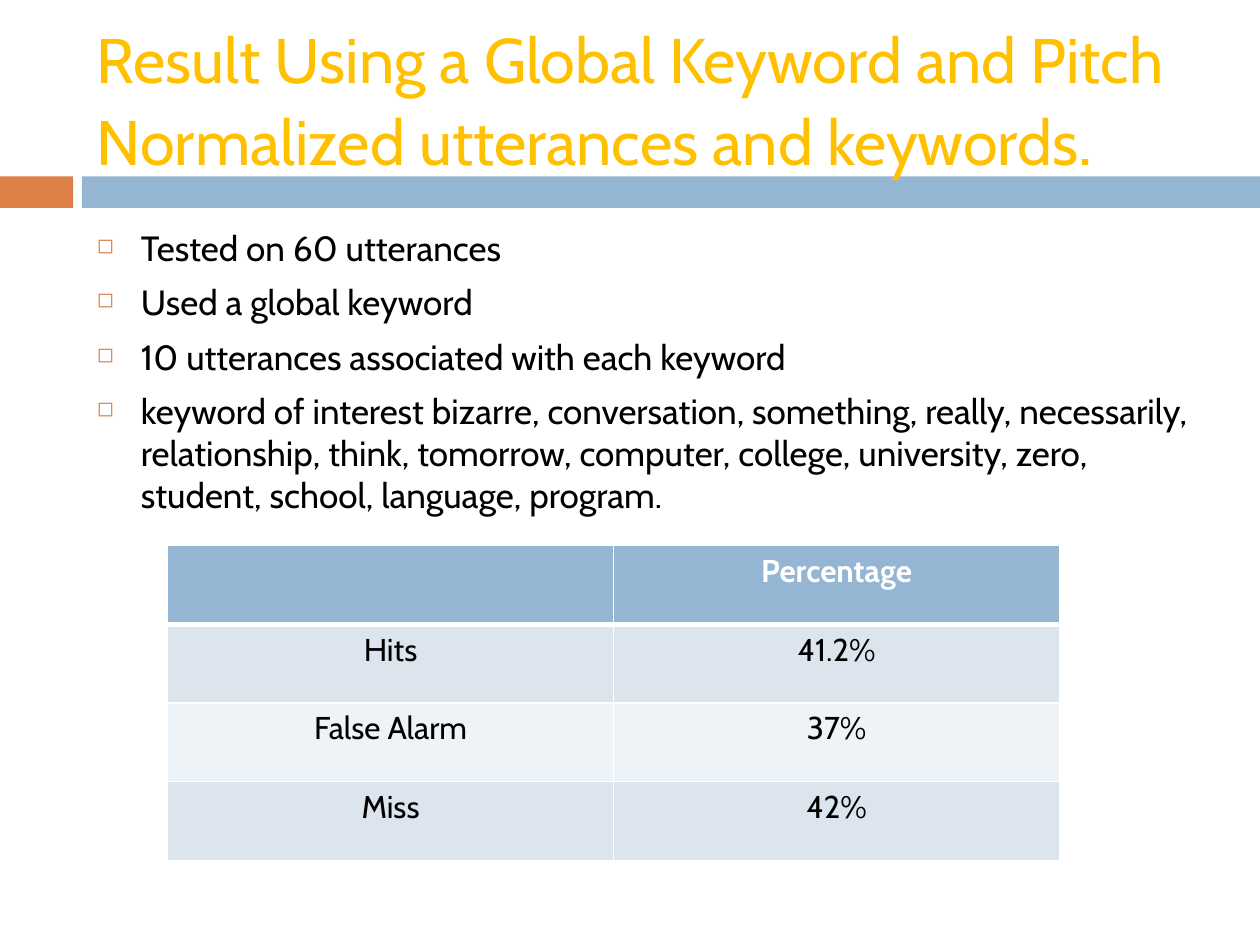
"""Build the slide on keyword results with pitch normalized utterances."""
from lxml.etree import SubElement
from pptx import Presentation
from pptx.dml.color import RGBColor
from pptx.enum.shapes import MSO_SHAPE
from pptx.enum.text import MSO_ANCHOR, PP_ALIGN
from pptx.oxml.ns import qn
from pptx.util import Inches, Pt

COLORS = {
    "orange": "DD8047", "blue": "94B6D2", "gold": "FFC000", "black": "000000",
    "white": "FFFFFF", "band": "DCE5EE", "pale": "EEF3F7",
}
FONT = "Cabin"
MARGIN, TEXT_WIDTH = 0.67, 8.92
BAND_TOP, BAND_HEIGHT = 1.4, 0.25
BULLETS = [
    "Tested on 60 utterances",
    "Used a global keyword",
    "10 utterances associated with each keyword",
    "keyword of interest bizarre, conversation, something, really, necessarily, "
    "relationship, think, tomorrow, computer, college, university, zero, "
    "student, school, language, program.",
]
RESULTS = [("", "Percentage"), ("Hits", "41.2%"), ("False Alarm", "37%"), ("Miss", "42%")]


def style(font, size, color, bold=False):
    font.name, font.size, font.bold = FONT, Pt(size), bold
    font.color.rgb = RGBColor.from_string(COLORS[color])


def add_border(cell, side, width):
    line = SubElement(cell._tc.get_or_add_tcPr(), qn(f"a:{side}"), w=str(Pt(width)))
    SubElement(SubElement(line, qn("a:solidFill")), qn("a:srgbClr"), val=COLORS["white"])


prs = Presentation()
prs.slide_width, prs.slide_height = Inches(10), Inches(7.5)
slide = prs.slides.add_slide(prs.slide_layouts[6])

for left, width, color in [(0, 0.58, "orange"), (0.65, 9.35, "blue")]:
    band = slide.shapes.add_shape(
        MSO_SHAPE.RECTANGLE, Inches(left), Inches(BAND_TOP), Inches(width), Inches(BAND_HEIGHT))
    band.shadow.inherit = False
    band.fill.solid()
    band.fill.fore_color.rgb = RGBColor.from_string(COLORS[color])
    band.line.fill.background()

title = slide.shapes.add_textbox(
    Inches(MARGIN), Inches(0.25), Inches(TEXT_WIDTH), Inches(1.08)).text_frame
title.word_wrap = True
title.vertical_anchor = MSO_ANCHOR.MIDDLE
for text, size in [
    ("Result Using a Global Keyword and Pitch Normalized utterances and keywords", 36),
    (".", 39.6),
]:
    run = title.paragraphs[0].add_run()
    run.text = text
    style(run.font, size, "gold")

body = slide.shapes.add_textbox(
    Inches(MARGIN), Inches(BAND_TOP + BAND_HEIGHT + 0.1), Inches(TEXT_WIDTH), Inches(4.92)).text_frame
body.word_wrap = True
for index, text in enumerate(BULLETS):
    point = body.add_paragraph() if index else body.paragraphs[0]
    point.text = text
    if index:
        point.space_before = Pt(7)
    props = point._p.get_or_add_pPr()
    props.set("marL", str(Inches(0.35)))
    props.set("indent", str(-Inches(0.35)))
    SubElement(SubElement(props, qn("a:buClr")), qn("a:srgbClr"), val=COLORS["orange"])
    SubElement(props, qn("a:buSzPct"), val="60000")
    SubElement(props, qn("a:buChar"), char="◻")
    style(point.font, 20, "black")

results = slide.shapes.add_table(
    len(RESULTS), 2, Inches(1.33), Inches(4.33), Inches(7.08), Inches(2.5)).table
for row, values in enumerate(RESULTS):
    fill = "blue" if row == 0 else "band" if row % 2 else "pale"
    for column, value in enumerate(values):
        cell = results.cell(row, column)
        for side in ("lnL", "lnR", "lnT", "lnB"):
            heavy = (row, side) in [(0, "lnB"), (1, "lnT")]
            add_border(cell, side, 3 if heavy else 1)
        cell.fill.solid()
        cell.fill.fore_color.rgb = RGBColor.from_string(COLORS[fill])
        cell.text = value
        label = cell.text_frame.paragraphs[0]
        label.alignment = PP_ALIGN.CENTER
        style(label.font, 18, "black" if row else "white", row == 0)

prs.save("out.pptx")
